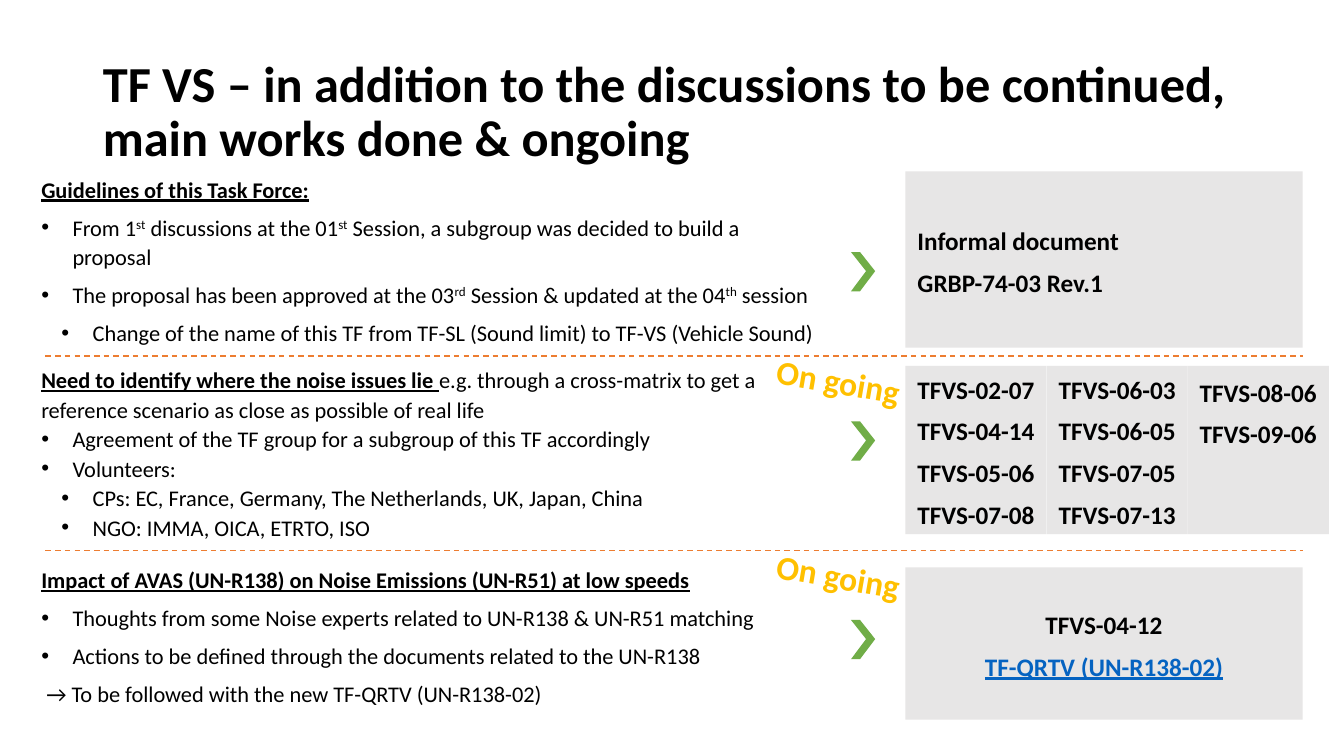
from lxml import etree
from pptx import Presentation
from pptx import util as u
from pptx.dml.color import RGBColor
from pptx.enum import dml, shapes, text
from pptx.oxml.ns import qn

TITLE = "TF VS – in addition to the discussions to be continued, main works done & ongoing"
BLACK, GREY, GREEN, ORANGE, AMBER, BLUE = "000000", "E7E6E6", "70AD47", "ED7D31", "FFC000", "0563C1"

SECTIONS = [
    {"top": 1.7, "height": 1.75, "space": 6, "arrow": 2.5, "lines": [
        ("plain", [("Guidelines of this Task Force:", "head")]),
        ("bullet", [("From 1", ""), ("st", "super"), (" discussions at the 01", ""), ("st", "super"),
                    (" Session, a subgroup was decided to build a proposal", "")]),
        ("bullet", [("The proposal has been approved at the 03", ""), ("rd", "super"),
                    (" Session & updated at the 04", ""), ("th", "super"), (" session", "")]),
        ("sub", [("Change of the name of this TF from TF-SL (Sound limit) to TF-VS (Vehicle Sound)", "")]),
    ]},
    {"top": 3.61, "height": 1.75, "space": 0, "arrow": 4.18, "lines": [
        ("plain", [("Need to identify where the noise issues lie ", "head"),
                   ("e.g. through a cross-matrix to get a reference scenario as close as possible of real life", "")]),
        ("bullet", [("Agreement of the TF group for a subgroup of this TF accordingly", "")]),
        ("bullet", [("Volunteers:", "")]),
        ("sub", [("CPs: EC, France, Germany, The Netherlands, UK, Japan, China", "")]),
        ("sub", [("NGO: IMMA, OICA, ETRTO, ISO", "")]),
    ]},
    {"top": 5.54, "height": 1.52, "space": 6, "arrow": 6.15, "lines": [
        ("plain", [("Impact of AVAS (UN-R138) on Noise Emissions (UN-R51) at low speeds", "head")]),
        ("bullet", [("Thoughts from some Noise experts related to UN-R138 & UN-R51 matching", "")]),
        ("bullet", [("Actions to be defined through the documents related to the UN-R138", "")]),
        ("arrow", [("→ To be followed with the new TF-QRTV (UN-R138-02)", "")]),
    ]},
]
INDENTS = {"plain": (0, 0, 0), "bullet": (0, 0.31, -0.31), "sub": (1, 0.51, -0.31), "arrow": (0, 0.05, 0)}

DOCUMENT_LEFT, DOCUMENT_WIDTH, COLUMN_WIDTH = 8.98, 3.94, 1.4
INFORMAL = ["Informal document", "GRBP-74-03 Rev.1"]
IMPACT = ["TFVS-04-12", "TF-QRTV (UN-R138-02)"]
NOISE_COLUMNS = [
    ["TFVS-02-07", "TFVS-04-14", "TFVS-05-06", "TFVS-07-08"],
    ["TFVS-06-03", "TFVS-06-05", "TFVS-07-05", "TFVS-07-13"],
    ["TFVS-08-06", "TFVS-09-06"],
]
SEPARATORS = [3.53, 5.46]
CHEVRON_LEFT = 8.44
CHEVRON = [(0, 0), (0.09, 0), (0.24, 0.19), (0.09, 0.39), (0, 0.39), (0.15, 0.19)]


def color(value):
    return RGBColor.from_string(value)


def inches(*values):
    return [u.Inches(value) for value in values]


def set_font(font, size, value, bold=False):
    font.name, font.size, font.bold = "Calibri", u.Pt(size), bold
    font.color.rgb = color(value)


def set_frame(frame, anchor, horizontal, vertical):
    frame.word_wrap, frame.vertical_anchor = True, anchor
    frame.margin_left = frame.margin_right = u.Inches(horizontal)
    frame.margin_top = frame.margin_bottom = u.Inches(vertical)


def add_paragraph(frame, index, space):
    paragraph = frame.add_paragraph() if index else frame.paragraphs[0]
    paragraph.line_spacing = 1.1
    paragraph.space_before = u.Pt(space if index else 0)
    return paragraph


def add_section(slide, section):
    box = slide.shapes.add_textbox(*inches(0.41, section["top"], 7.73, section["height"]))
    set_frame(box.text_frame, text.MSO_ANCHOR.MIDDLE, 0, 0)
    for index, (kind, runs) in enumerate(section["lines"]):
        paragraph = add_paragraph(box.text_frame, index, section["space"])
        level, margin, indent = INDENTS[kind]
        paragraph.level = level
        properties = paragraph._p.get_or_add_pPr()
        properties.set("marL", str(u.Inches(margin)))
        properties.set("indent", str(u.Inches(indent)))
        if indent:
            etree.SubElement(properties, qn("a:buFont")).set("typeface", "Arial")
            etree.SubElement(properties, qn("a:buChar")).set("char", "•")
        for words, style in runs:
            run = paragraph.add_run()
            run.text = words
            set_font(run.font, 16, BLACK, style == "head")
            run.font.underline = style == "head"
            if style == "super":
                run._r.get_or_add_rPr().set("baseline", "30000")


def add_chevron(slide, top):
    points = [tuple(inches(CHEVRON_LEFT + x, top + y)) for x, y in CHEVRON]
    builder = slide.shapes.build_freeform(*points[0], scale=1.0)
    builder.add_line_segments(points[1:], close=True)
    chevron = builder.convert_to_shape()
    chevron.shadow.inherit = False
    chevron.fill.solid()
    chevron.fill.fore_color.rgb = color(GREEN)
    chevron.line.fill.background()


def add_separator(slide, y):
    line = slide.shapes.add_connector(shapes.MSO_CONNECTOR.STRAIGHT, *inches(0.45, y, 12.92, y))
    line.line.color.rgb = color(ORANGE)
    line.line.width = u.Pt(1)
    line.line.dash_style = dml.MSO_LINE.DASH
    etree.SubElement(line._element.spPr, qn("a:effectLst"))


def add_documents(slide, left, top, width, height, names, align=text.PP_ALIGN.CENTER,
                  anchor=text.MSO_ANCHOR.MIDDLE, insets=(0.12, 0.08)):
    card = slide.shapes.add_shape(shapes.MSO_SHAPE.RECTANGLE, *inches(left, top, width, height))
    card.shadow.inherit = False
    card.fill.solid()
    card.fill.fore_color.rgb = color(GREY)
    card.line.fill.background()
    set_frame(card.text_frame, anchor, *insets)
    for index, name in enumerate(names):
        paragraph = add_paragraph(card.text_frame, index, 6)
        paragraph.text, paragraph.alignment = name, align
        set_font(paragraph.font, 18, BLACK, True)
    return card


def add_ongoing(slide, top):
    label = slide.shapes.add_textbox(*inches(7.41, top, 1.81, 0.5))
    label.rotation = 9.8
    label.text_frame.word_wrap = True
    paragraph = label.text_frame.paragraphs[0]
    paragraph.text, paragraph.alignment = "On going", text.PP_ALIGN.CENTER
    set_font(paragraph.font, 24, AMBER, True)


def main():
    """Build the slide on the main works of the task force."""
    presentation = Presentation()
    presentation.slide_width, presentation.slide_height = inches(13.33, 7.5)
    slide = presentation.slides.add_slide(presentation.slide_layouts[5])

    title = slide.shapes.title
    title.left, title.top, title.width, title.height = inches(0.92, 0.4, 11.5, 1.45)
    title.text_frame.text = TITLE
    set_frame(title.text_frame, text.MSO_ANCHOR.MIDDLE, 0.1, 0.05)
    heading = title.text_frame.paragraphs[0]
    heading.alignment, heading.line_spacing = text.PP_ALIGN.LEFT, 0.9
    set_font(heading.font, 36, BLACK, True)

    for section in SECTIONS:
        add_section(slide, section)
        add_chevron(slide, section["arrow"])

    add_documents(slide, DOCUMENT_LEFT, 1.7, DOCUMENT_WIDTH, 1.75, INFORMAL, text.PP_ALIGN.LEFT)
    for column, names in enumerate(NOISE_COLUMNS):
        full = len(names) == len(NOISE_COLUMNS[0])
        anchor = text.MSO_ANCHOR.MIDDLE if full else text.MSO_ANCHOR.TOP
        add_documents(slide, DOCUMENT_LEFT + column * COLUMN_WIDTH, 3.63, COLUMN_WIDTH, 1.67,
                      names, anchor=anchor, insets=(0.05, 0.02 if full else 0.08))
    impact = add_documents(slide, DOCUMENT_LEFT, 5.63, DOCUMENT_WIDTH, 1.51, IMPACT)
    reference = impact.text_frame.paragraphs[1].runs[0].font
    reference.color.rgb, reference.underline = color(BLUE), True

    for y in SEPARATORS:
        add_separator(slide, y)
        add_ongoing(slide, y)
    presentation.save("out.pptx")


if __name__ == "__main__":
    main()
